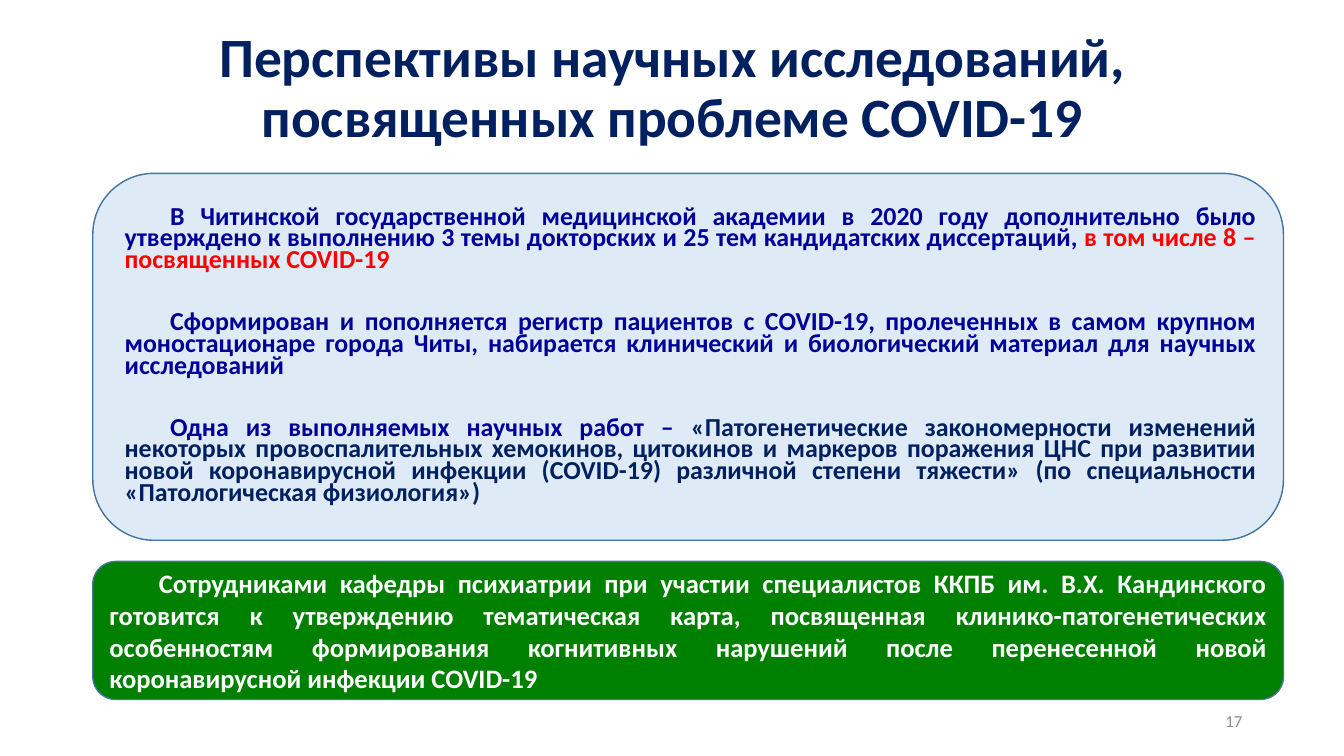
"""Build the slide on research prospects for COVID-19."""
from dataclasses import dataclass

from pptx import Presentation
from pptx import util as u
from pptx.dml.color import RGBColor
from pptx.enum import shapes, text

NAVY, BLUE, RED, WHITE, GRAY = "002060", "000099", "FF0000", "FFFFFF", "8C8C8C"
PALE_BLUE, GREEN, OUTLINE = "DEEBF7", "008000", "43739E"


@dataclass(frozen=True)
class Span:
    words: str
    color: str


@dataclass(frozen=True)
class Para:
    spans: tuple[Span, ...]
    space_before: float = 0


@dataclass(frozen=True)
class Block:
    frame: tuple[float, float, float, float]
    paras: tuple[Para, ...]
    size: float
    align: text.PP_ALIGN = text.PP_ALIGN.JUSTIFY
    bold: bool = True
    line_spacing: float = 1.0
    margin: float = 0
    indent: float = 0
    fill: str | None = None


TITLE = Block(
    (0.92, 0.26, 11.5, 1.25),
    (Para((Span("Перспективы научных исследований, посвященных проблеме COVID-19", NAVY),)),),
    39.6, text.PP_ALIGN.CENTER, line_spacing=0.9,
)
PAGE_NUMBER = Block(
    (9.42, 6.95, 3, 0.4), (Para((Span("17", GRAY),)),), 12, text.PP_ALIGN.RIGHT, bold=False,
)
DISSERTATIONS = Block(
    (0.92, 1.72, 11.81, 3.64),
    (
        Para((
            Span("В Читинской государственной медицинской академии в 2020 году дополнительно "
                 "было утверждено к выполнению 3 темы докторских и 25 тем кандидатских "
                 "диссертаций, ", BLUE),
            Span("в том числе 8 – посвященных COVID-19", RED),
        ), 10),
        Para((
            Span("Сформирован и пополняется регистр пациентов с COVID-19, пролеченных в самом "
                 "крупном моностационаре города Читы, набирается клинический и биологический "
                 "материал для научных исследований", BLUE),
        ), 28.7),
        Para((
            Span("Одна из выполняемых научных работ – ", BLUE),
            Span("«Патогенетические закономерности изменений некоторых провоспалительных "
                 "хемокинов, цитокинов и маркеров поражения ЦНС при развитии новой "
                 "коронавирусной инфекции (COVID-19) различной степени тяжести» "
                 "(по специальности «Патологическая физиология»)", NAVY),
        ), 28.7),
    ),
    18.5, line_spacing=0.7, margin=0.04, indent=0.45, fill=PALE_BLUE,
)
PSYCHIATRY = Block(
    (0.92, 5.57, 11.81, 1.37),
    (Para((
        Span("Сотрудниками кафедры психиатрии при участии специалистов ККПБ им. В.Х. "
             "Кандинского готовится к утверждению тематическая карта, посвященная "
             "клинико-патогенетических особенностям формирования когнитивных нарушений после "
             "перенесенной новой коронавирусной инфекции COVID-19", WHITE),
    )),),
    19, indent=0.49, fill=GREEN,
)


def rgb(value: str) -> RGBColor:
    """Turn a hex string into a colour."""
    return RGBColor.from_string(value)


def add_block(page, block: Block) -> None:
    """Draw a text box, or a rounded panel when the block has a fill."""
    frame = [u.Inches(length) for length in block.frame]
    if block.fill:
        box = page.shapes.add_shape(shapes.MSO_SHAPE.ROUNDED_RECTANGLE, *frame)
        box.shadow.inherit = False
        box.fill.solid()
        box.fill.fore_color.rgb = rgb(block.fill)
        box.line.color.rgb = rgb(OUTLINE)
        box.line.width = u.Pt(1)
    else:
        box = page.shapes.add_textbox(*frame)
    body = box.text_frame
    body.word_wrap = True
    body.vertical_anchor = text.MSO_ANCHOR.MIDDLE
    for index, item in enumerate(block.paras):
        para = body.paragraphs[0] if index == 0 else body.add_paragraph()
        para.alignment = block.align
        para.line_spacing = block.line_spacing
        para.space_before = u.Pt(item.space_before)
        properties = para._p.get_or_add_pPr()
        properties.set("marL", str(u.Inches(block.margin)))
        properties.set("indent", str(u.Inches(block.indent)))
        for span in item.spans:
            run = para.add_run()
            run.text = span.words
            run.font.name = "Calibri"
            run.font.size = u.Pt(block.size)
            run.font.bold = block.bold
            run.font.color.rgb = rgb(span.color)


def main() -> None:
    """Create and save the deck."""
    deck = Presentation()
    deck.slide_width, deck.slide_height = u.Inches(13.33), u.Inches(7.5)
    page = deck.slides.add_slide(deck.slide_layouts[6])
    for block in (TITLE, PAGE_NUMBER, DISSERTATIONS, PSYCHIATRY):
        add_block(page, block)
    deck.save("out.pptx")


if __name__ == "__main__":
    main()
